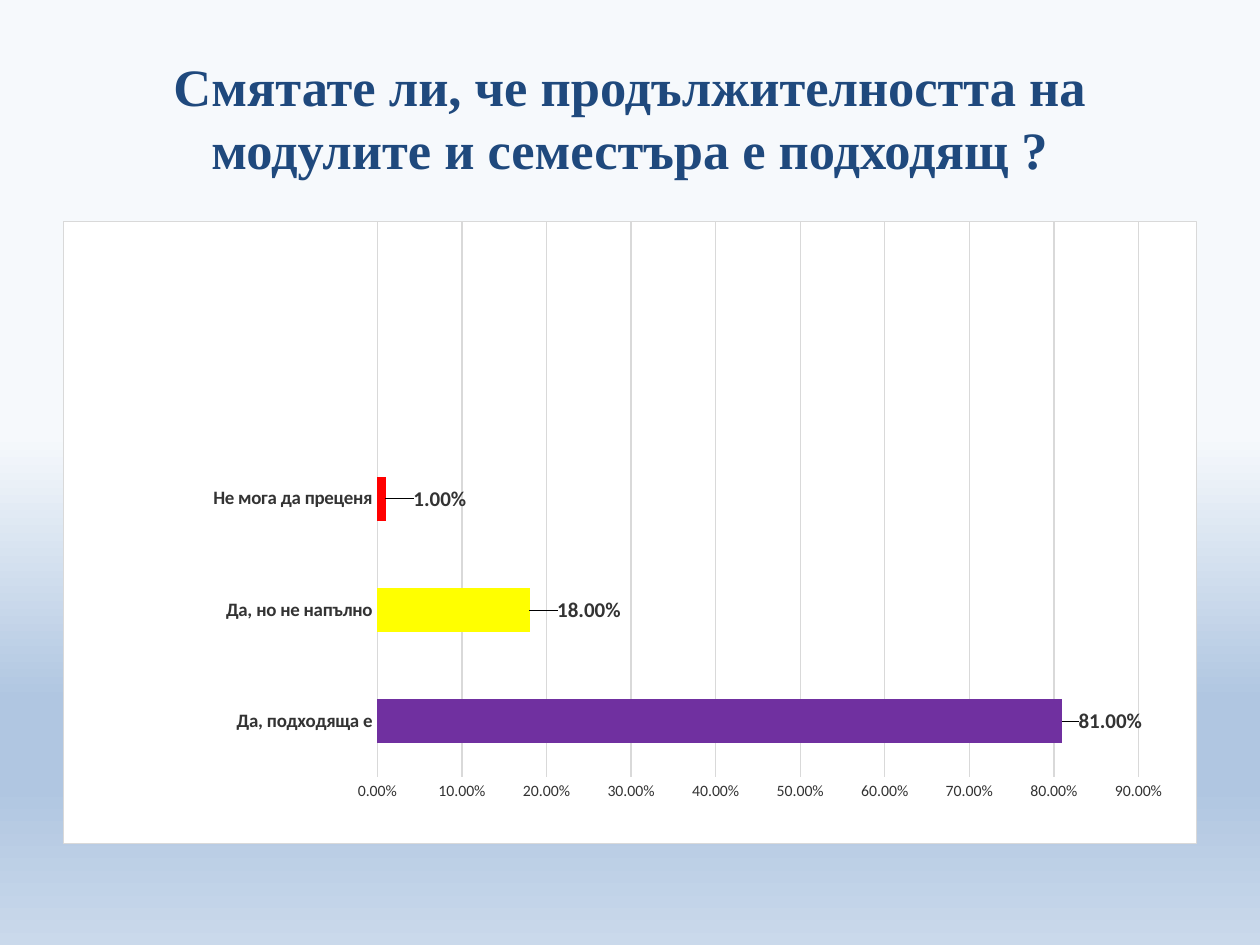
from lxml import etree
from pptx import Presentation
from pptx.chart.data import CategoryChartData
from pptx.dml.color import RGBColor
from pptx.enum.chart import XL_CHART_TYPE, XL_LABEL_POSITION, XL_TICK_MARK
from pptx.enum.text import MSO_ANCHOR, PP_ALIGN
from pptx.oxml import parse_xml
from pptx.oxml.ns import nsdecls, qn
from pptx.util import Inches, Pt

BAR_CLUSTERED = XL_CHART_TYPE.BAR_CLUSTERED
OUTSIDE_END = XL_LABEL_POSITION.OUTSIDE_END
NO_TICK = XL_TICK_MARK.NONE
MIDDLE = MSO_ANCHOR.MIDDLE
CENTER = PP_ALIGN.CENTER

COLORS = {
    "title": "1F497D", "text": "333333", "black": "000000",
    "panel": "FFFFFF", "grid": "D9D9D9", "series": "00B0F0",
    "purple": "7030A0", "yellow": "FFFF00", "red": "FF0000",
}
BACKGROUND_STOPS = [(46, "F6F9FC"), (74, "B0C6E1"), (83, "B0C6E1"), (100, "CAD9EB")]
ANSWERS = [
    ("Да, подходяща е", 0.81, "purple", 0.01, 0),
    ("Да, но не напълно", 0.18, "yellow", 0.02, 0),
    ("Не мога да преценя", 0.01, "red", 0.02, 0),
    ("", None, None, 0, 0),
    ("", None, None, 0, 0),
]
PERCENT = "0.00%"


def style_font(font, size, color, bold=False, name="Calibri"):
    font.name = name
    font.size = Pt(size)
    font.bold = bold
    font.color.rgb = RGBColor.from_string(COLORS[color])


def manual_layout(**settings):
    layout = parse_xml(f"<c:layout {nsdecls('c')}><c:manualLayout/></c:layout>")
    for tag, value in settings.items():
        etree.SubElement(layout[0], qn(f"c:{tag}")).set("val", str(value))
    return layout


presentation = Presentation()
presentation.slide_width = Inches(10)
presentation.slide_height = Inches(7.5)
slide = presentation.slides.add_slide(presentation.slide_layouts[5])

background = slide.background.fill
background.gradient()
background.gradient_angle = 270
stop_list = next(slide.element.iter(qn("a:gsLst")))
for stop in list(stop_list):
    stop_list.remove(stop)
for position, color in BACKGROUND_STOPS:
    stop = etree.SubElement(stop_list, qn("a:gs"), pos=str(position * 1000))
    etree.SubElement(stop, qn("a:srgbClr"), val=color)

title = slide.shapes.title
title.left, title.top = Inches(0.5), Inches(0.3)
title.width, title.height = Inches(9), Inches(1.25)
title.text_frame.word_wrap = True
title.text_frame.vertical_anchor = MIDDLE
paragraph = title.text_frame.paragraphs[0]
paragraph.alignment = CENTER
run = paragraph.add_run()
run.text = "Смятате ли, че продължителността на модулите и семестъра е подходящ ?"
style_font(run.font, 30, "title", True, "Times New Roman")

chart_data = CategoryChartData(number_format=PERCENT)
chart_data.categories = [answer[0] for answer in ANSWERS]
chart_data.add_series("Series 1", [answer[1] for answer in ANSWERS])
chart = slide.shapes.add_chart(
    BAR_CLUSTERED, Inches(0.5), Inches(1.75), Inches(9), Inches(4.95), chart_data
).chart
chart.has_legend = False
chart.has_title = False
style_font(chart.font, 10, "black")

chart_space = chart.element
chart_space.find(qn("c:txPr")).addprevious(parse_xml(
    f"<c:spPr {nsdecls('c', 'a')}>"
    f'<a:solidFill><a:srgbClr val="{COLORS["panel"]}"/></a:solidFill>'
    f'<a:ln w="{Pt(0.75)}"><a:solidFill><a:srgbClr val="{COLORS["grid"]}"/></a:solidFill></a:ln>'
    "</c:spPr>"
))
plot_area = next(chart_space.iter(qn("c:plotArea")))
for layout in plot_area.findall(qn("c:layout")):
    plot_area.remove(layout)
plot_area.insert(0, manual_layout(
    layoutTarget="inner", xMode="edge", yMode="edge", x=0.277, y=0, w=0.672, h=0.893
))

category_axis = chart.category_axis
value_axis = chart.value_axis
for axis, size, bold in [(category_axis, 10.8, True), (value_axis, 9, False)]:
    axis.major_tick_mark = NO_TICK
    axis.minor_tick_mark = NO_TICK
    axis.format.line.fill.background()
    style_font(axis.tick_labels.font, size, "text", bold)
value_axis.minimum_scale = 0
value_axis.maximum_scale = 0.9
value_axis.major_unit = 0.1
value_axis.tick_labels.number_format = PERCENT
value_axis.tick_labels.number_format_is_linked = False
value_axis.has_major_gridlines = True
gridline = value_axis.major_gridlines.format.line
gridline.width = Pt(0.75)
gridline.color.rgb = RGBColor.from_string(COLORS["grid"])

plot = chart.plots[0]
plot.vary_by_categories = False
plot.gap_width = 150
series = plot.series[0]
series.format.fill.solid()
series.format.fill.fore_color.rgb = RGBColor.from_string(COLORS["series"])
labels = series.data_labels
labels.show_value = True
labels.number_format = PERCENT
labels.number_format_is_linked = False
labels.position = OUTSIDE_END
style_font(labels.font, 12, "text", True)

for index, (answer, value, color, shift_x, shift_y) in enumerate(ANSWERS):
    if value is None:
        continue
    point = series.points[index]
    point.format.fill.solid()
    point.format.fill.fore_color.rgb = RGBColor.from_string(COLORS[color])
    label = point.data_label
    label.position = OUTSIDE_END
    style_font(label.font, 12, "text", True)
    label_element = list(chart_space.iter(qn("c:dLbl")))[-1]
    label_element.insert(1, manual_layout(x=shift_x, y=shift_y))

presentation.save("out.pptx")
